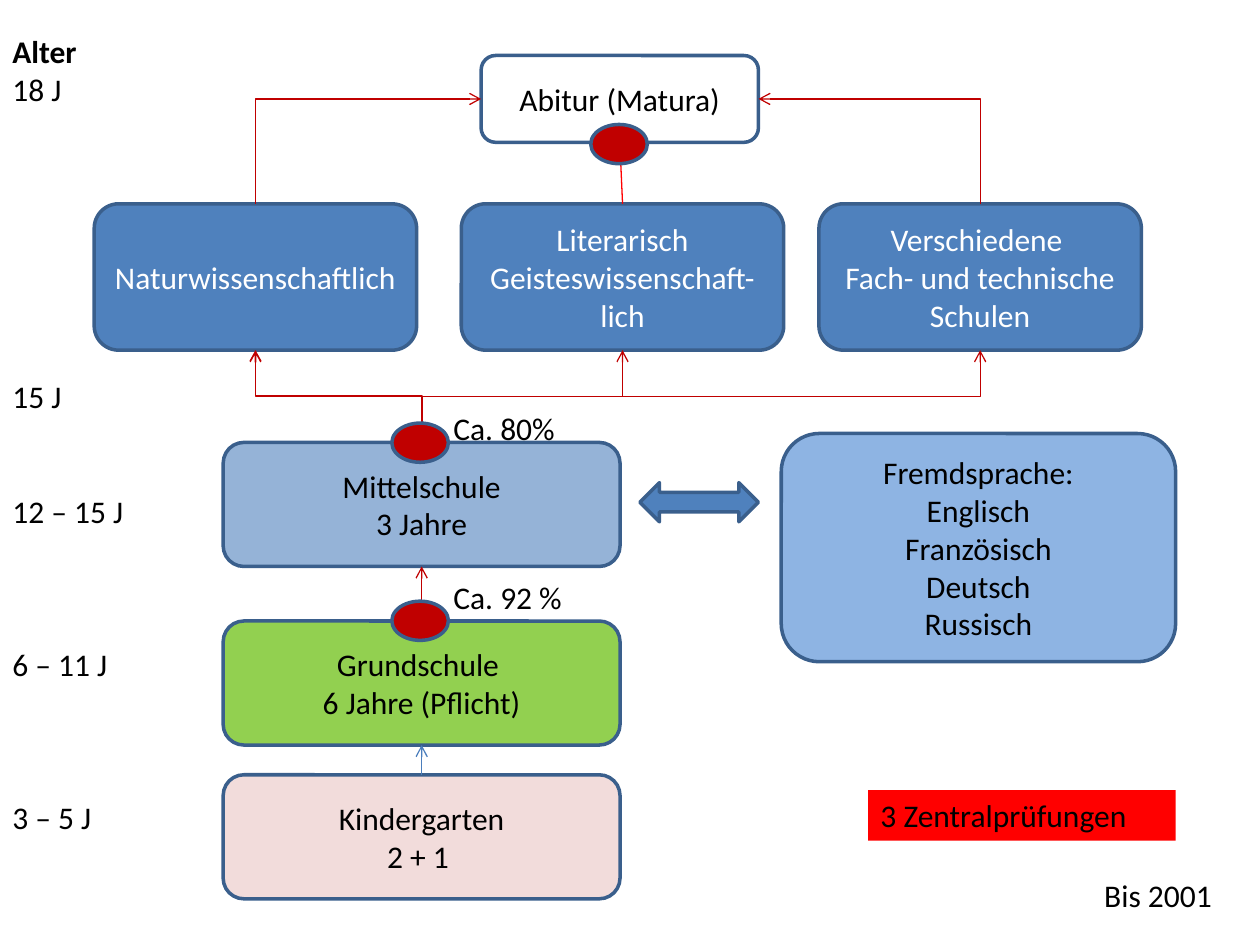
import pptx
import pptx.dml.color
import pptx.enum.shapes
import pptx.enum.text
import pptx.oxml
import pptx.oxml.ns
import pptx.util

Cm = pptx.util.Cm
Pt = pptx.util.Pt
SHAPE = pptx.enum.shapes.MSO_SHAPE
CONNECTOR = pptx.enum.shapes.MSO_CONNECTOR
ALIGN = pptx.enum.text.PP_ALIGN

BLACK, WHITE = "000000", "FFFFFF"
BLUE, OUTLINE = "4F81BD", "3A5F8C"
DARK_RED, RED = "C00000", "FF0000"
LINE_HEIGHT = 21.97  # points, one line of 18 pt Calibri

STAGE_LEFT, STAGE_WIDTH, STAGE_HEIGHT = 4.5, 8, 2.5
STAGE_MIDDLE = STAGE_LEFT + STAGE_WIDTH / 2
TRACK_TOP, TRACK_WIDTH, TRACK_HEIGHT = 4.11, 6.5, 2.95
EXAM_LEFT, EXAM_TOP, EXAM_WIDTH, EXAM_HEIGHT = 9.7, 1.12, 5.59, 1.75

STAGES = [
    (15.62, "F2DCDB", ["Kindergarten", "2 + 1 "]),
    (12.52, "92D050", ["Grundschule ", "6 Jahre (Pflicht)"]),
    (8.92, "95B3D7", ["Mittelschule", "3 Jahre"]),
]
TRACKS = [
    (1.9, ["Naturwissenschaftlich"]),
    (9.3, ["Literarisch Geisteswissenschaft-lich"]),
    (16.51, ["Verschiedene ", "Fach- und technische Schulen"]),
]
LANGUAGES = ["Fremdsprache:", "Englisch", "Französisch", "Deutsch", "Russisch"]
# Text and the number of free lines above it
AGES = [("Alter", 0), ("18 J", 0), ("15 J", 7), ("12 – 15 J", 2),
        ("6 – 11 J", 3), ("3 – 5 J", 3)]
EXAM_MARKS = [(7.9, 12.12), (7.9, 8.53), (11.91, 2.51)]


def color(hex_string):
    return pptx.dml.color.RGBColor.from_string(hex_string)


def add_span(para, text, hex_color=BLACK, bold=False):
    span = para.add_run()
    span.text = text
    span.font.name = "Calibri"
    span.font.size = Pt(18)
    span.font.bold = bold
    span.font.color.rgb = color(hex_color)


def write_lines(frame, lines, hex_color=BLACK, align=ALIGN.LEFT):
    frame.word_wrap = True
    for index, line in enumerate(lines):
        para = frame.add_paragraph() if index else frame.paragraphs[0]
        para.alignment = align
        add_span(para, line, hex_color)


def add_figure(page, kind, left, top, width, height, fill):
    """Add a filled preset shape with the common blue outline."""
    box = page.shapes.add_shape(kind, Cm(left), Cm(top), Cm(width), Cm(height))
    box.shadow.inherit = False
    box.fill.solid()
    box.fill.fore_color.rgb = color(fill)
    box.line.color.rgb = color(OUTLINE)
    box.line.width = Pt(2)
    return box


def add_school(page, left, top, width, height, fill, lines, hex_color=BLACK):
    box = add_figure(page, SHAPE.ROUNDED_RECTANGLE, left, top, width, height, fill)
    box.text_frame.vertical_anchor = pptx.enum.text.MSO_ANCHOR.MIDDLE
    write_lines(box.text_frame, lines, hex_color, ALIGN.CENTER)


def add_label(page, left, top, width, text, align=ALIGN.LEFT, fill=None):
    box = page.shapes.add_textbox(Cm(left), Cm(top), Cm(width), Cm(1.02))
    if fill:
        box.fill.solid()
        box.fill.fore_color.rgb = color(fill)
    write_lines(box.text_frame, [text], align=align)


def add_ages(page):
    box = page.shapes.add_textbox(0, Cm(0.53), Cm(2.8), Cm(16.41))
    frame = box.text_frame
    frame.word_wrap = True
    for index, (text, free_lines) in enumerate(AGES):
        para = frame.add_paragraph() if index else frame.paragraphs[0]
        para.space_before = Pt(free_lines * LINE_HEIGHT)
        add_span(para, text, bold=index == 0)


def add_arrow(page, x1, y1, x2, y2, hex_color=DARK_RED, width=0.75,
              kind=CONNECTOR.STRAIGHT):
    arrow = page.shapes.add_connector(kind, Cm(x1), Cm(y1), Cm(x2), Cm(y2))
    arrow.line.color.rgb = color(hex_color)
    arrow.line.width = Pt(width)
    head = pptx.oxml.parse_xml(
        f'<a:tailEnd {pptx.oxml.ns.nsdecls("a")} type="arrow"/>')
    arrow.line._get_or_add_ln().append(head)
    effects = pptx.oxml.parse_xml(f'<a:effectLst {pptx.oxml.ns.nsdecls("a")}/>')
    arrow._element.spPr.append(effects)
    return arrow


def add_rising_arrow(page, x1, y1, x2, y2, preset, width=0.75):
    """Add a bent arrow that leaves upwards: a sideways one, turned by 270°."""
    middle_x, middle_y = (x1 + x2) / 2, (y1 + y2) / 2
    half_rise, half_run = (y1 - y2) / 2, (x2 - x1) / 2
    arrow = add_arrow(page, middle_x - half_rise, middle_y - half_run,
                      middle_x + half_rise, middle_y + half_run,
                      width=width, kind=CONNECTOR.ELBOW)
    properties = arrow._element.spPr
    properties.find(pptx.oxml.ns.qn("a:xfrm")).set("rot", str(270 * 60000))
    properties.find(pptx.oxml.ns.qn("a:prstGeom")).set("prst", preset)


def add_arrows(page):
    kindergarten, primary, middle = [top for top, _, _ in STAGES]
    science, arts, technical = [left + TRACK_WIDTH / 2 for left, _ in TRACKS]

    for center, width in ((science, 1), (arts, 0.75), (technical, 0.75)):
        add_rising_arrow(page, STAGE_MIDDLE, middle, center,
                         TRACK_TOP + TRACK_HEIGHT, "bentConnector3", width)
    add_arrow(page, STAGE_MIDDLE, primary, STAGE_MIDDLE, middle + STAGE_HEIGHT)
    add_arrow(page, STAGE_MIDDLE, kindergarten, STAGE_MIDDLE,
              primary + STAGE_HEIGHT, "4B7EBC")

    exam_middle = EXAM_TOP + EXAM_HEIGHT / 2
    for center, side in ((science, EXAM_LEFT), (technical, EXAM_LEFT + EXAM_WIDTH)):
        add_rising_arrow(page, center, TRACK_TOP, side, exam_middle, "bentConnector2")
    add_arrow(page, arts, TRACK_TOP, EXAM_LEFT + EXAM_WIDTH / 2,
              EXAM_TOP + EXAM_HEIGHT, RED)


def main():
    deck = pptx.Presentation()
    deck.slide_width, deck.slide_height = Cm(25.4), Cm(19.05)
    page = deck.slides.add_slide(deck.slide_layouts[6])

    for top, fill, lines in STAGES:
        add_school(page, STAGE_LEFT, top, STAGE_WIDTH, STAGE_HEIGHT, fill, lines)
    add_school(page, 15.75, 8.74, 7.95, 4.6, "8EB4E3", LANGUAGES)
    for left, lines in TRACKS:
        add_school(page, left, TRACK_TOP, TRACK_WIDTH, TRACK_HEIGHT, BLUE, lines, WHITE)
    add_school(page, EXAM_LEFT, EXAM_TOP, EXAM_WIDTH, EXAM_HEIGHT, WHITE,
               ["Abitur (Matura)"])

    add_arrows(page)
    add_figure(page, SHAPE.LEFT_RIGHT_ARROW, 12.9, 9.73, 2.39, 0.79, BLUE)

    add_label(page, 18.69, 17.53, 5.99, "Bis 2001", ALIGN.RIGHT)
    add_label(page, 8.89, 11.53, 3, "Ca. 92 %")
    add_label(page, 8.89, 8.13, 2.8, "Ca. 80%")
    add_label(page, 17.5, 15.93, 6.2, "3 Zentralprüfungen", fill=RED)
    add_ages(page)
    for left, top in EXAM_MARKS:
        add_figure(page, SHAPE.OVAL, left, top, 1.14, 0.79, DARK_RED)

    deck.save("out.pptx")


if __name__ == "__main__":
    main()
